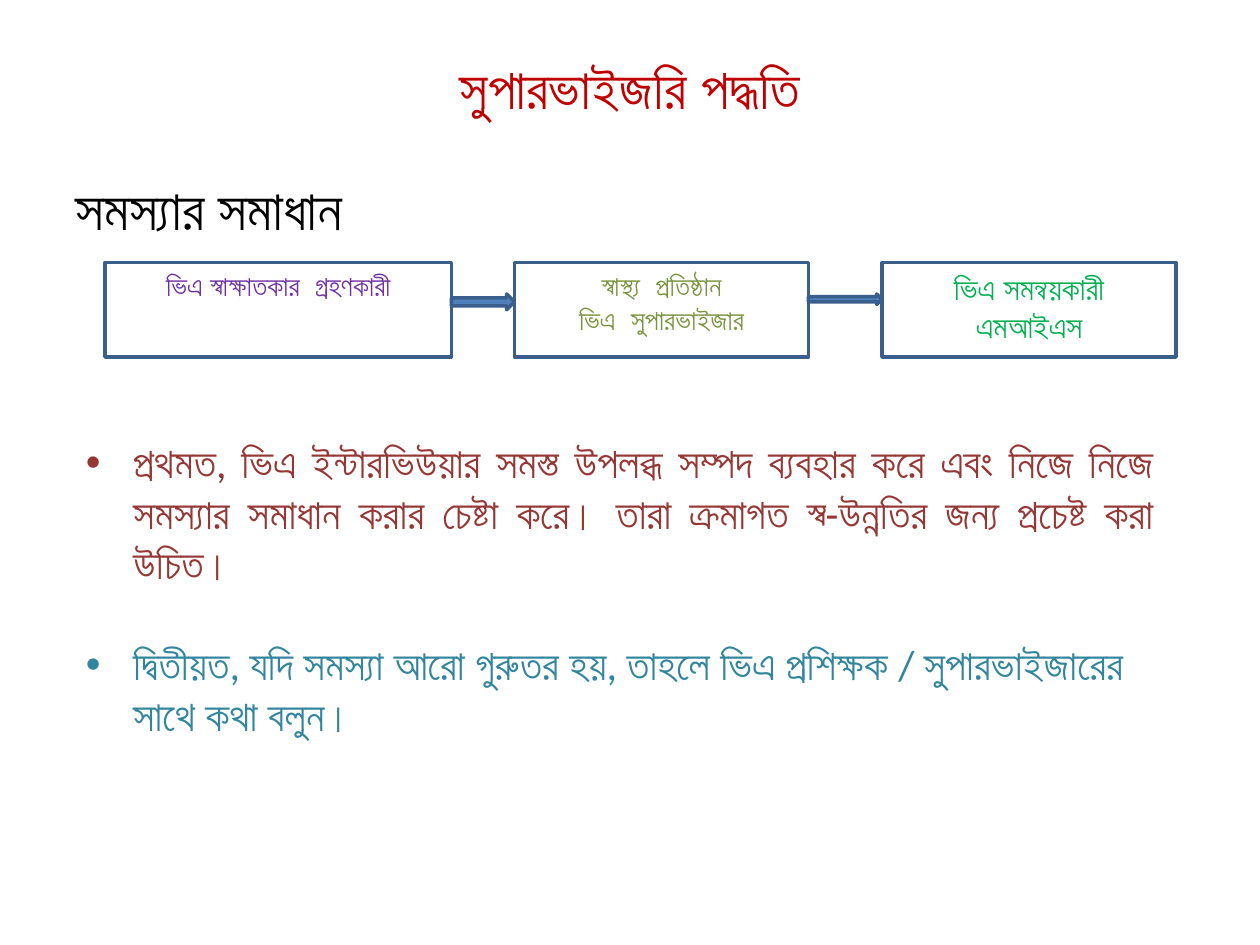
from lxml import etree
from pptx import Presentation
from pptx import util as u
from pptx.dml.color import RGBColor
from pptx.enum import shapes, text
from pptx.oxml.ns import qn

Pt = u.Pt
COLORS = {
    "title": "C00000", "heading": "000000", "white": "FFFFFF",
    "outline": "3A5F8C", "arrow": "4F81BD",
    "interviewer": "7030A0", "supervisor": "77933C", "coordinator": "00B050",
    "first": "953735", "second": "31859C",
}


def rgb(name):
    return RGBColor.from_string(COLORS[name])


class SlideBuilder:
    font = "Calibri"
    line_width = 2

    def __init__(self, slide):
        self.slide = slide

    def style(self, paragraph, size, color, bold=False):
        for run in paragraph.runs:
            run.font.name = self.font
            run.font.size = Pt(size)
            run.font.bold = bold
            run.font.color.rgb = rgb(color)

    def bullet(self, paragraph, char=None, indent=0):
        props = paragraph._p.get_or_add_pPr()
        props.set("marL", str(Pt(indent)))
        props.set("indent", str(-Pt(indent)))
        if char:
            font = etree.SubElement(props, qn("a:buFont"))
            font.set("typeface", "Arial")
            etree.SubElement(props, qn("a:buChar")).set("char", char)
        else:
            etree.SubElement(props, qn("a:buNone"))

    def placeholder(self, index, words, box, size, color, bold=False):
        holder = self.slide.placeholders[index]
        holder.left, holder.top, holder.width, holder.height = map(Pt, box)
        holder.text_frame.text = words
        paragraph = holder.text_frame.paragraphs[0]
        self.style(paragraph, size, color, bold)
        return paragraph

    def shape(self, kind, box, fill):
        shape = self.slide.shapes.add_shape(kind, *map(Pt, box))
        shape.shadow.inherit = False
        shape.fill.solid()
        shape.fill.fore_color.rgb = rgb(fill)
        shape.line.color.rgb = rgb("outline")
        shape.line.width = Pt(self.line_width)
        return shape

    def step(self, words, box, size, color):
        frame = self.shape(shapes.MSO_SHAPE.RECTANGLE, box, "white").text_frame
        frame.text = words
        frame.vertical_anchor = text.MSO_ANCHOR.TOP
        for paragraph in frame.paragraphs:
            paragraph.alignment = text.PP_ALIGN.CENTER
            self.style(paragraph, size, color, bold=True)

    def arrow(self, box):
        self.shape(shapes.MSO_SHAPE.RIGHT_ARROW, box, "arrow")

    def bullets(self, items, box, size, gap):
        frame = self.slide.shapes.add_textbox(*map(Pt, box)).text_frame
        frame.word_wrap = True
        frame.auto_size = text.MSO_AUTO_SIZE.SHAPE_TO_FIT_TEXT
        frame.text = "\n".join(words for words, _, _ in items)
        for number, (words, color, align) in enumerate(items):
            paragraph = frame.paragraphs[number]
            paragraph.alignment = align
            paragraph.space_before = Pt(gap if number else 0)
            self.bullet(paragraph, "•", 27)
            self.style(paragraph, size, color)


def main():
    deck = Presentation()
    deck.slide_width, deck.slide_height = Pt(720), Pt(540)
    page = SlideBuilder(deck.slides.add_slide(deck.slide_layouts[1]))

    # Title and heading
    page.placeholder(0, "সুপারভাইজরি পদ্ধতি", (36, 21.6, 648, 56), 32, "title", bold=True)
    heading = page.placeholder(1, "সমস্যার সমাধান", (36, 96, 648, 386.4), 32, "heading")
    page.bullet(heading)

    # Escalation steps, each joined to the next by an arrow
    top, height, arrow_top = 150, 54, 168
    steps = [
        ("ভিএ স্বাক্ষাতকার  গ্রহণকারী", 60, 198, 16, "interviewer"),
        ("স্বাস্থ্য  প্রতিষ্ঠান\nভিএ  সুপারভাইজার", 294, 168, 16, "supervisor"),
        ("ভিএ সমন্বয়কারী\nএমআইএস", 504, 168, 18, "coordinator"),
    ]
    for words, left, width, size, color in steps:
        page.step(words, (left, top, width, height), size, color)
    for before, after, thickness in zip(steps, steps[1:], (9, 6)):
        start = before[1] + before[2]
        page.arrow((start, arrow_top, after[1] - start, thickness))

    # Advice
    advice = [
        ("প্রথমত, ভিএ ইন্টারভিউয়ার সমস্ত উপলব্ধ সম্পদ ব্যবহার করে এবং নিজে নিজে "
         "সমস্যার সমাধান করার চেষ্টা করে। তারা ক্রমাগত স্ব-উন্নতির জন্য প্রচেষ্ট করা উচিত।",
         "first", text.PP_ALIGN.JUSTIFY),
        ("দ্বিতীয়ত, যদি সমস্যা আরো গুরুতর হয়, তাহলে ভিএ প্রশিক্ষক / সুপারভাইজারের "
         "সাথে কথা বলুন।", "second", text.PP_ALIGN.LEFT),
    ]
    page.bullets(advice, (42, 246, 624, 181.5), size=24, gap=29)

    deck.save("out.pptx")


if __name__ == "__main__":
    main()
